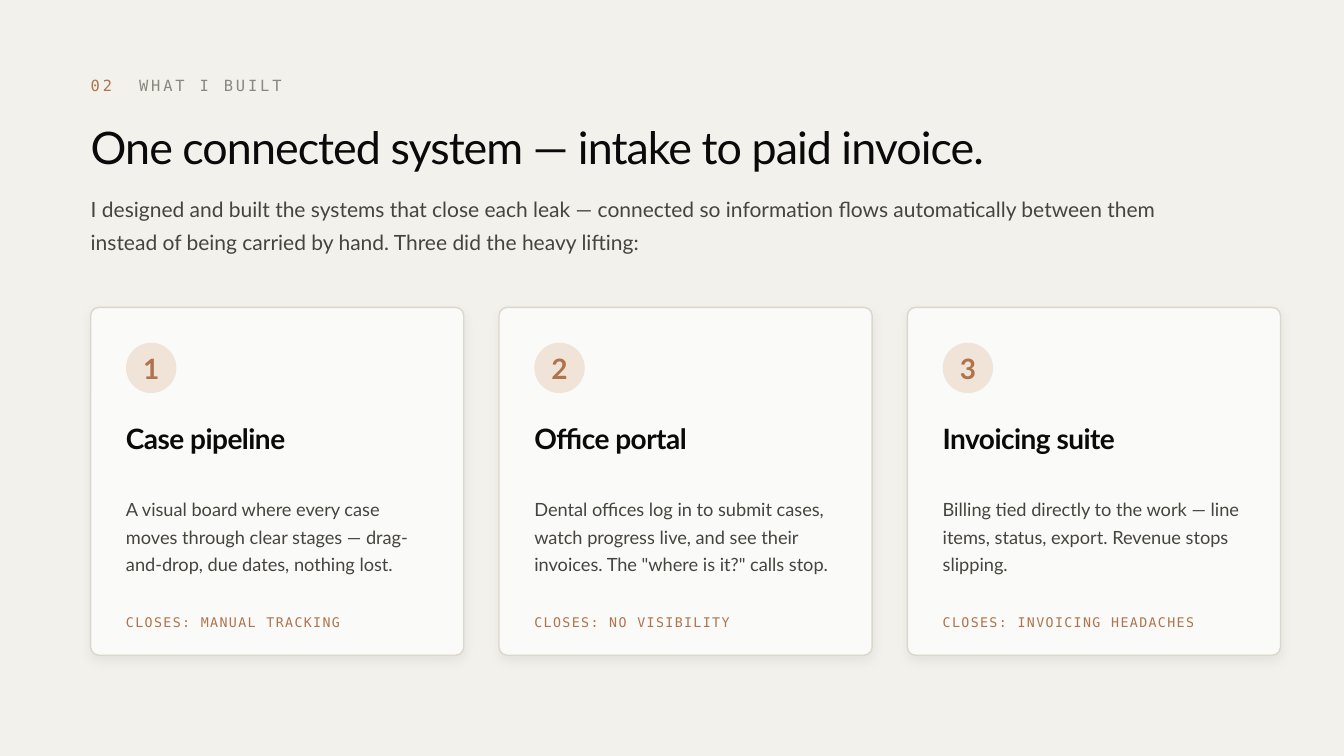
from dataclasses import dataclass

from lxml.etree import SubElement
from pptx import Presentation
from pptx.dml.color import RGBColor
from pptx.enum.shapes import MSO_SHAPE as Preset
from pptx.enum.text import MSO_ANCHOR as Anchor, MSO_AUTO_SIZE as AutoSize, PP_ALIGN as Align
from pptx.oxml.ns import qn
from pptx.util import Inches, Pt


@dataclass(frozen=True)
class TextStyle:
    size: float
    colour: str
    name: str = "Lato"
    bold: bool = False
    tracking: float = 0
    leading: float = 1.0


class Theme:
    mono = "DejaVu Sans Mono"
    page, card, border, badge, shadow = "F2F1EC", "FAFAF8", "DAD7CD", "F0E4D8", "000000"
    accent, ink, body, muted = "B0734C", "0A0A0A", "46443E", "8A877E"
    section_number = TextStyle(11, accent, mono, tracking=2)
    section_name = TextStyle(11, muted, mono, tracking=2)
    title = TextStyle(32, ink, tracking=-0.7)
    lead = TextStyle(15, body, leading=1.3)
    number = TextStyle(20, accent, bold=True)
    heading = TextStyle(20, ink, bold=True, tracking=-0.4)
    detail = TextStyle(13, body, leading=1.25)
    closes = TextStyle(9.5, accent, mono, tracking=1)


CARDS = [
    ("Case pipeline",
     "A visual board where every case moves through clear stages — drag-and-drop, due dates, nothing lost.",
     "CLOSES: MANUAL TRACKING"),
    ("Office portal",
     "Dental offices log in to submit cases, watch progress live, and see their invoices. "
     "The \"where is it?\" calls stop.",
     "CLOSES: NO VISIBILITY"),
    ("Invoicing suite",
     "Billing tied directly to the work — line items, status, export. Revenue stops slipping.",
     "CLOSES: INVOICING HEADACHES"),
]


def colour(value):
    return RGBColor.from_string(value)


def write(shape, *parts, align=Align.LEFT):
    frame = shape.text_frame
    settings = {"word_wrap": True, "auto_size": AutoSize.NONE, "vertical_anchor": Anchor.MIDDLE,
                "margin_left": 0, "margin_top": 0, "margin_right": 0, "margin_bottom": 0}
    for key, value in settings.items():
        setattr(frame, key, value)
    para = frame.paragraphs[0]
    para.alignment = align
    for text, style in parts:
        para.line_spacing = style.leading
        run = para.add_run()
        run.text = text
        for key, value in {"name": style.name, "size": Pt(style.size), "bold": style.bold}.items():
            setattr(run.font, key, value)
        run.font.color.rgb = colour(style.colour)
        if style.tracking:
            run.font._element.set("spc", str(round(style.tracking * 100)))
    return para


def add_text(page, box, *parts):
    return write(page.shapes.add_textbox(*map(Inches, box)), *parts)


def add_panel(page, preset, box, fill, border=None):
    panel = page.shapes.add_shape(preset, *map(Inches, box))
    panel.shadow.inherit = False
    panel.fill.solid()
    panel.fill.fore_color.rgb = colour(fill)
    if border:
        panel.line.color.rgb = colour(border)
        panel.line.width = Pt(1)
    else:
        panel.line.fill.background()
    return panel


def add_soft_shadow(shape):
    effects = shape._element.spPr.find(qn("a:effectLst"))
    shadow = SubElement(effects, qn("a:outerShdw"), blurRad=str(Pt(8)), dist=str(Pt(3)),
                        dir=str(90 * 60000), algn="bl", rotWithShape="0")
    tint = SubElement(shadow, qn("a:srgbClr"), val=Theme.shadow)
    SubElement(tint, qn("a:alpha"), val="6000")


def add_header(page, box):
    left, top, width, _ = box
    para = add_text(page, (left, top, 9, 0.3),
                    ("02\t", Theme.section_number), ("WHAT I BUILT", Theme.section_name))
    tabs = SubElement(para._p.get_or_add_pPr(), qn("a:tabLst"))
    SubElement(tabs, qn("a:tab"), pos=str(Inches(0.48)), algn="l")

    title = page.shapes.title
    title_box = {"left": left, "top": top + 0.4, "width": width, "height": 0.7}
    for key, value in title_box.items():
        setattr(title, key, Inches(value))
    write(title, ("One connected system — intake to paid invoice.", Theme.title))

    add_text(page, (left, top + 1.15, 11, 0.7), (
        "I designed and built the systems that close each leak — connected so information flows "
        "automatically between them instead of being carried by hand. Three did the heavy lifting:",
        Theme.lead))


def add_card(page, box, number, heading, detail, closes):
    left, top, width, _ = box
    card = add_panel(page, Preset.ROUNDED_RECTANGLE, box, Theme.card, Theme.border)
    card.adjustments[0] = 0.023
    add_soft_shadow(card)
    inner, text_width = left + 0.35, width - 0.7
    badge = add_panel(page, Preset.OVAL, (inner, top + 0.35, 0.5, 0.5), Theme.badge)
    write(badge, (str(number), Theme.number), align=Align.CENTER)
    rows = [(1.05, 0.5, heading, Theme.heading),
            (1.6, 1.3, detail, Theme.detail),
            (2.95, 0.35, closes, Theme.closes)]
    for offset, height, text, style in rows:
        add_text(page, (inner, top + offset, text_width, height), (text, style))


def add_card_row(page, box, gap):
    left, top, width, height = box
    card_width = (width - gap * (len(CARDS) - 1)) / len(CARDS)
    for index, content in enumerate(CARDS):
        card_box = (left + index * (card_width + gap), top, card_width, height)
        add_card(page, card_box, index + 1, *content)


def main():
    deck = Presentation()
    deck.slide_width, deck.slide_height = Inches(13.33), Inches(7.5)
    page = deck.slides.add_slide(deck.slide_layouts.get_by_name("Title Only"))
    page.background.fill.solid()
    page.background.fill.fore_color.rgb = colour(Theme.page)
    add_header(page, (0.9, 0.7, 11.6, 1.85))
    add_card_row(page, (0.9, 3.05, 11.8, 3.45), gap=0.35)
    deck.save("out.pptx")


if __name__ == "__main__":
    main()
